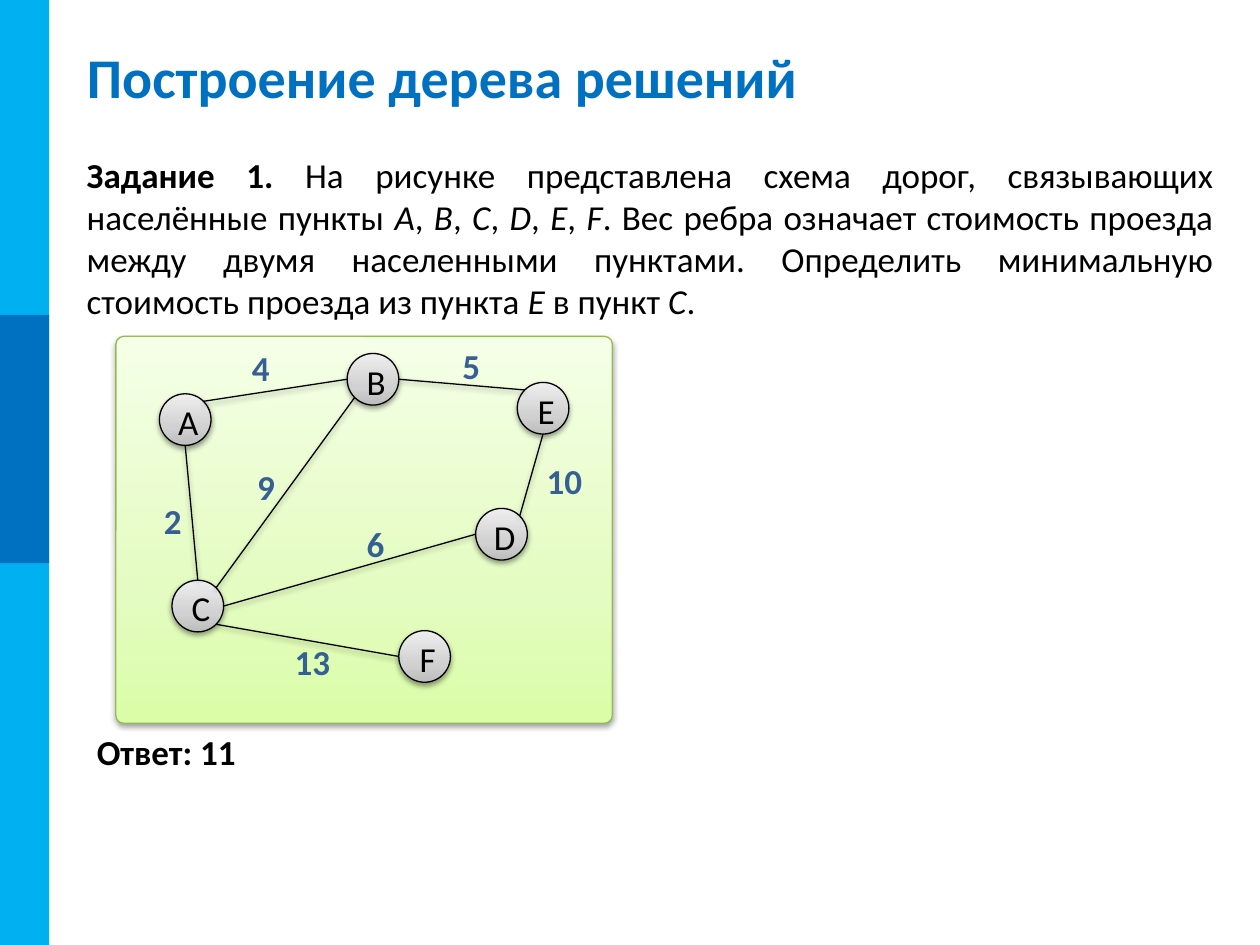
from math import cos, radians, sin

from lxml.etree import SubElement
from copy import deepcopy
from pptx import Presentation
from pptx.dml.color import RGBColor as RGB
from pptx.enum.shapes import MSO_CONNECTOR as LINK, MSO_SHAPE as SHAPE
from pptx.enum.text import MSO_ANCHOR as ANCHOR, PP_ALIGN as ALIGN
from pptx.oxml.ns import qn
from pptx.util import Inches, Pt

THEME = {
    "font": "Calibri", "head": 32, "body": 20, "line": 0.75,
    "ink": "000000", "blue": "0070C0", "sky": "00B0F0",
    "cost": "376092", "edge": "98B955",
    "green": [(0, "DAFDA7"), (0.35, "E4FCC2"), (1, "F5FFE7")],
    "gray": [(0, "BDBDBD"), (0.35, "D1D1D1"), (1, "EEEEEE")],
}

TITLE = "Построение дерева решений"
# Words between asterisks are italic.
TASK = ("Задание 1.",
        " На рисунке представлена схема дорог, связывающих населённые пункты "
        "*A*, *B*, *C*, *D*, *E*, *F*. Вес ребра означает стоимость проезда "
        "между двумя населенными пунктами. Определить минимальную стоимость "
        "проезда из пункта *E *в пункт *C*.")
ANSWER = "Ответ: 11"

BARS = [((0, 0, 0.39, 7.5), "sky"), ((0, 2.5, 0.39, 1.97), "blue")]
PANEL = (0.92, 2.67, 3.94, 3.07)
SIZE = 0.41
# Town: centre x, y
TOWNS = {"A": (1.47, 3.33), "B": (2.96, 3.01), "C": (1.57, 4.81),
         "D": (3.98, 4.24), "E": (4.31, 3.24), "F": (3.37, 5.21)}
# From, angle it leaves at, to, angle it arrives at (clockwise from the right),
# cost, centre of the cost label
ROADS = [
    ("C", 270, "A", 90, "2", (1.37, 4.13)),
    ("C", 45, "F", 180, "13", (2.48, 5.25)),
    ("E", 90, "D", 315, "10", (4.48, 3.81)),
    ("D", 180, "C", 0, "6", (2.98, 4.31)),
    ("E", 225, "B", 0, "5", (3.74, 2.9)),
    ("B", 135, "C", 315, "9", (2.11, 3.86)),
    ("A", 315, "B", 180, "4", (2.07, 2.92)),
]


def color(name):
    return RGB.from_string(THEME[name])


def style(run, ink="ink", size="body", bold=False, italic=False):
    font = run.font
    font.name, font.size = THEME["font"], Pt(THEME[size])
    font.bold, font.italic = bold, italic
    font.color.rgb = color(ink)


def place(shapes, kind, box):
    shape = shapes.add_shape(kind, *map(Inches, box))
    shape.shadow.inherit = False
    return shape


def outline(item, ink):
    item.line.color.rgb = color(ink)
    item.line.width = Pt(THEME["line"])


def shade(item):
    """Give a shape or connector a soft shadow below it."""
    props = item._element.spPr
    effects = props.find(qn("a:effectLst"))
    if effects is None:
        effects = SubElement(props, qn("a:effectLst"))
    drop = SubElement(effects, qn("a:outerShdw"), blurRad=str(Pt(3.1)),
                      dist=str(Pt(1.6)), dir="5400000", rotWithShape="0")
    tint = SubElement(drop, qn("a:srgbClr"), val=THEME["ink"])
    SubElement(tint, qn("a:alpha"), val="38000")


def blend(shape, name):
    """Fill with a three-stop gradient that runs from bottom to top."""
    shape.fill.gradient()
    shape.fill.gradient_angle = 90
    stops = shape._element.spPr.find(qn("a:gradFill")).find(qn("a:gsLst"))
    stops.append(deepcopy(stops[0]))
    for stop, (spot, tint) in zip(shape.fill.gradient_stops, THEME[name]):
        stop.position = spot
        stop.color.rgb = RGB.from_string(tint)


def write(shapes, box, text, align, **look):
    area = shapes.add_textbox(*map(Inches, box))
    frame = area.text_frame
    frame.word_wrap = True
    para = frame.paragraphs[0]
    para.text, para.alignment = text, align
    style(para.runs[0], **look)
    return frame


def port(town, angle):
    """Point on the rim of a town."""
    x, y = TOWNS[town]
    turn = radians(angle)
    return (Inches(x + SIZE / 2 * cos(turn)),
            Inches(y + SIZE / 2 * sin(turn)))


def draw_town(shapes, name):
    x, y = TOWNS[name]
    node = place(shapes, SHAPE.OVAL, (x - SIZE / 2, y - SIZE / 2, SIZE, SIZE))
    blend(node, "gray")
    outline(node, "ink")
    shade(node)
    frame = node.text_frame
    frame.word_wrap = False
    frame.vertical_anchor = ANCHOR.MIDDLE
    frame.margin_left, frame.margin_top = Inches(0.05), Inches(0.03)
    frame.margin_right = frame.margin_bottom = 0
    frame.text = name
    frame.paragraphs[0].alignment = ALIGN.CENTER
    style(frame.paragraphs[0].runs[0])


def draw_map(slide):
    panel = place(slide.shapes, SHAPE.ROUNDED_RECTANGLE, PANEL)
    panel.adjustments[0] = 0.02
    blend(panel, "green")
    outline(panel, "edge")
    shade(panel)

    graph = slide.shapes.add_group_shape().shapes
    for name in TOWNS:
        draw_town(graph, name)
    for start, leave, end, reach, *_ in ROADS:
        road = graph.add_connector(LINK.STRAIGHT, *port(start, leave),
                                   *port(end, reach))
        outline(road, "ink")
        shade(road)
    for *_, cost, (x, y) in ROADS:
        frame = write(slide.shapes, (x - 0.29, y - 0.17, 0.58, 0.34), cost,
                      ALIGN.CENTER, ink="cost", bold=True)
        frame.vertical_anchor = ANCHOR.MIDDLE


def main():
    deck = Presentation()
    deck.slide_width, deck.slide_height = Inches(10), Inches(7.5)
    slide = deck.slides.add_slide(deck.slide_layouts[5])

    for box, ink in BARS:
        bar = place(slide.shapes, SHAPE.RECTANGLE, box)
        bar.fill.solid()
        bar.fill.fore_color.rgb = color(ink)
        bar.line.fill.background()

    title = slide.shapes.title
    title.left, title.top = Inches(0.59), Inches(0.3)
    title.width, title.height = Inches(9.06), Inches(0.61)
    title.text_frame.text = TITLE
    title.text_frame.vertical_anchor = ANCHOR.MIDDLE
    para = title.text_frame.paragraphs[0]
    para.alignment = ALIGN.LEFT
    style(para.runs[0], ink="blue", size="head", bold=True)

    draw_map(slide)

    label, body = TASK
    frame = write(slide.shapes, (0.59, 1.17, 9.14, 1.45), label,
                  ALIGN.JUSTIFY, bold=True)
    for i, part in enumerate(body.split("*")):
        run = frame.paragraphs[0].add_run()
        run.text = part
        style(run, italic=i % 2 == 1)
    write(slide.shapes, (0.67, 5.75, 9.14, 0.44), ANSWER, ALIGN.JUSTIFY,
          bold=True)

    deck.save("out.pptx")


if __name__ == "__main__":
    main()
